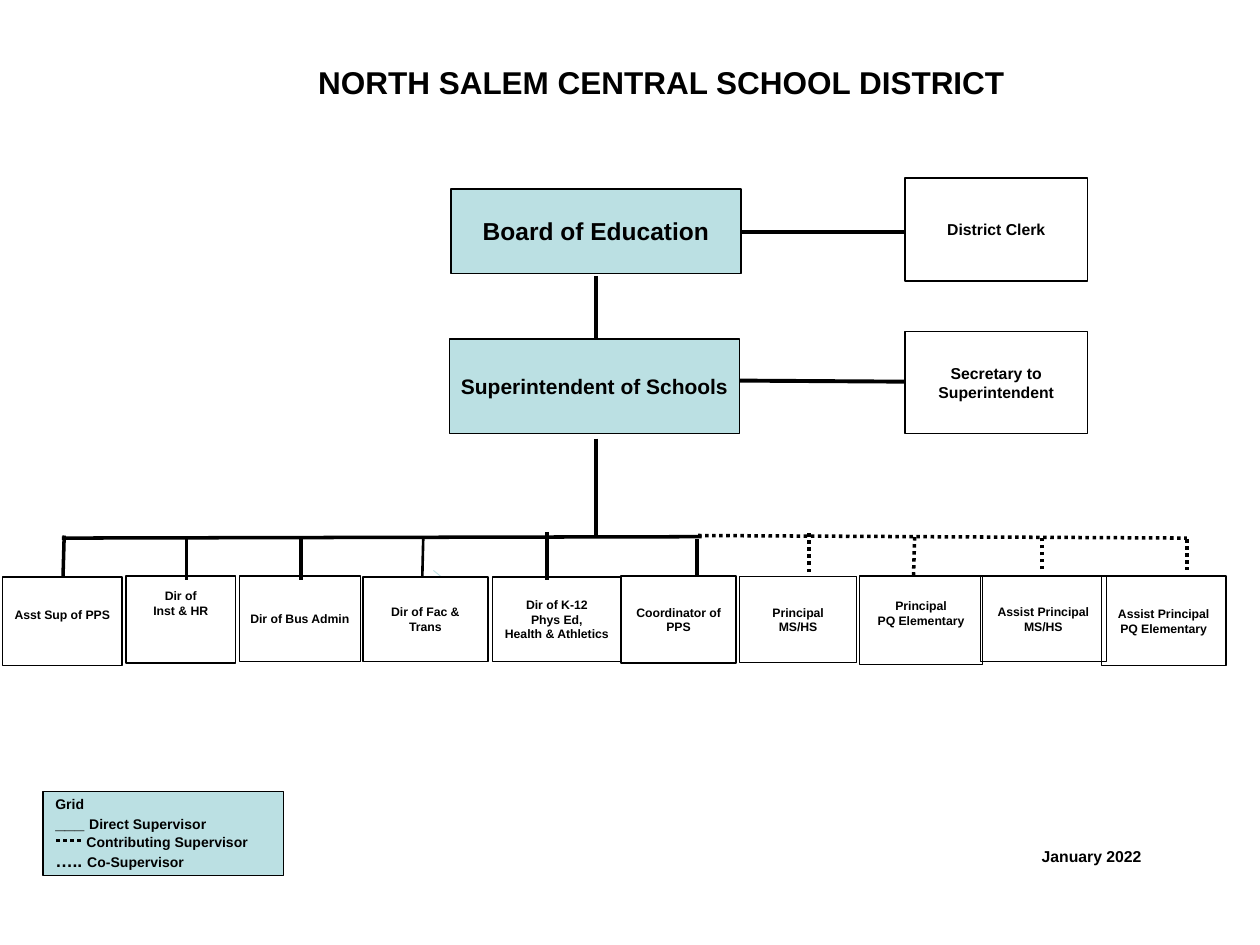
import pptx
import pptx.util
import pptx.dml.color
import pptx.enum.dml
import pptx.enum.shapes
import pptx.enum.text
import pptx.oxml.ns
import lxml.etree

Pt = pptx.util.Pt
HUES = {"ink": "000000", "teal": "BBE0E3", "white": "FFFFFF"}
ALIGN = pptx.enum.text.PP_ALIGN
ANCHOR = pptx.enum.text.MSO_ANCHOR


def hue(name):
    return pptx.dml.color.RGBColor.from_string(HUES[name])


def write(shape, text, size=7, align=ALIGN.CENTER, anchor=ANCHOR.MIDDLE, wrap=True, foot=3.6):
    frame = shape.text_frame
    frame.word_wrap = wrap
    frame.vertical_anchor = anchor
    frame.margin_left = frame.margin_right = Pt(7.2)
    frame.margin_top, frame.margin_bottom = Pt(3.6), Pt(foot)
    rows = [[(row, size)] for row in text.split("\n")] if isinstance(text, str) else text
    for i, row in enumerate(rows):
        para = frame.paragraphs[0] if i == 0 else frame.add_paragraph()
        para.alignment = align
        for words, points in row:
            run = para.add_run()
            run.text = words
            run.font.name = "Arial"
            run.font.size = Pt(points)
            run.font.bold = True
            run.font.color.rgb = hue("ink")
    return frame


def label(slide, box, text, **style):
    write(slide.shapes.add_textbox(*map(Pt, box)), text, **style)


def card(slide, box, text, fill=None, edge=0.75, **style):
    kind = pptx.enum.shapes.MSO_SHAPE.RECTANGLE
    shape = slide.shapes.add_shape(kind, *map(Pt, box))
    shape.shadow.inherit = False
    if fill:
        shape.fill.solid()
        shape.fill.fore_color.rgb = hue(fill)
    else:
        shape.fill.background()
    shape.line.color.rgb = hue("ink")
    shape.line.width = Pt(edge)
    return write(shape, text, **style)


def link(slide, ends, width=2, dots=False, color="ink"):
    kind = pptx.enum.shapes.MSO_CONNECTOR.STRAIGHT
    wire = slide.shapes.add_connector(kind, *map(Pt, ends))
    wire.line.color.rgb = hue(color)
    wire.line.width = Pt(width)
    if dots:
        wire.line.dash_style = pptx.enum.dml.MSO_LINE.ROUND_DOT
    lxml.etree.SubElement(wire._element.spPr, pptx.oxml.ns.qn("a:effectLst"))


def leaders(slide, box):
    x, y, w, h = box
    for x1, y1, x2, y2, width in [
        (83.6, 56.2, 83.6, 91.5, 2),
        (83.6, 149.1, 83.6, 204.5, 2),
        (164.2, 116, 274.4, 116.7, 2.25),
        (166.4, 31, 269.3, 31, 2.25),
    ]:
        link(slide, (x + x1, y + y1, x + x2, y + y2), width)
    card(slide, (x + 0.8, y + 6.5, 165.6, 48.2), "Board of Education", "teal", size=14)
    card(slide, (x, y + 92.2, 165.6, 54), "Superintendent of Schools", "teal", size=12, wrap=False)
    side = x + w - 104.4
    card(slide, (side, y, 104.4, 59), "District Clerk", "white", 1, size=9)
    card(slide, (side, y + h - 58.3, 104.4, 58.3), "Secretary to Superintendent", "white", 1, size=9)


def staff(slide, box):
    x, y, w, h = box
    for x1, y1, x2, y2, width, dots in [
        (401, 2.7, 35.3, 3.5, 2, False),
        (36.7, 2, 36, 25.8, 2, False),
        (106.6, 3.5, 106.6, 27.2, 2, False),
        (172.1, 3.5, 172.1, 27.2, 2, False),
        (241.9, 2.7, 241.2, 30, 1.5, False),
        (312.5, 0, 312.5, 27.2, 2, False),
        (398.2, 26.5, 398.2, 4.2, 2.25, False),
        (398.9, 2, 678.2, 3.5, 2, True),
        (462.2, 22.9, 462.2, 0.6, 2, True),
        (522, 25, 522.7, 2.7, 2, True),
        (595.4, 21.4, 595.4, 2.7, 2, True),
        (678.2, 4.2, 678.2, 22, 2, True),
    ]:
        link(slide, (x + x1, y + y1, x + x2, y + y2), width, dots)
    link(slide, (x + 254.2, y + 27.2, x + 247.7, y + 22), 0.5, color="teal")
    base = y + 25.2
    for left, drop, wide, tall, text, foot in [
        (1.4, 0.6, 68.4, 50.4, "Asst Sup of PPS", 11.6),
        (72, 0, 62.6, 49.7, "Dir of\nInst & HR", 22),
        (136.8, 0, 69.1, 49, "Dir of Bus Admin", 3.6),
        (281.5, 0.6, 73.4, 48.2, "Dir of K-12\nPhys Ed,\nHealth & Athletics", 3.6),
        (422.6, 0.4, 67, 49, "Principal\nMS/HS", 3.6),
        (491, 0, 70.6, 50.4, "Principal\nPQ Elementary", 11.6),
        (560.2, 0, 72, 49, "Assist Principal\nMS/HS", 3.6),
        (629.3, 0, 71.3, 51.1, "Assist Principal\nPQ Elementary", 3.6),
    ]:
        card(slide, (x + left, base + drop, wide, tall), text, wrap=False, foot=foot)
    card(slide, (x + 207.4, base + 0.6, 71.3, 48.2), "Dir of Fac & Trans", "white", 1)
    card(slide, (x + 355, base, 65.5, 49.7), "Coordinator of PPS", "white", 1)


def legend(slide, box):
    x, y, w, h = box
    rows = [
        [("Grid", 8)],
        [("___ ", 10), ("Direct Supervisor", 8)],
        [("Contributing Supervisor", 8)],
        [("….. ", 10), ("Co-Supervisor", 8)],
    ]
    frame = card(slide, box, rows, "teal", align=ALIGN.LEFT)
    frame.paragraphs[2]._p.get_or_add_pPr().set("marL", str(Pt(17.8)))
    link(slide, (x + 21.6, y + 28, x + 5.8, y + 28), dots=True)


def main():
    deck = pptx.Presentation()
    deck.slide_width, deck.slide_height = Pt(720), Pt(540)
    slide = deck.slides.add_slide(deck.slide_layouts[6])
    label(slide, (72, 23, 612, 48.2), "NORTH SALEM CENTRAL SCHOOL DISTRICT", size=18)
    leaders(slide, (257, 101.5, 364.4, 146.2))
    staff(slide, (0, 304, 720, 76.3))
    legend(slide, (24.5, 452.2, 137.5, 48.2))
    label(slide, (588.2, 480.2, 95.8, 18), "January 2022", size=9, align=ALIGN.LEFT, anchor=ANCHOR.TOP)
    deck.save("out.pptx")


if __name__ == "__main__":
    main()
